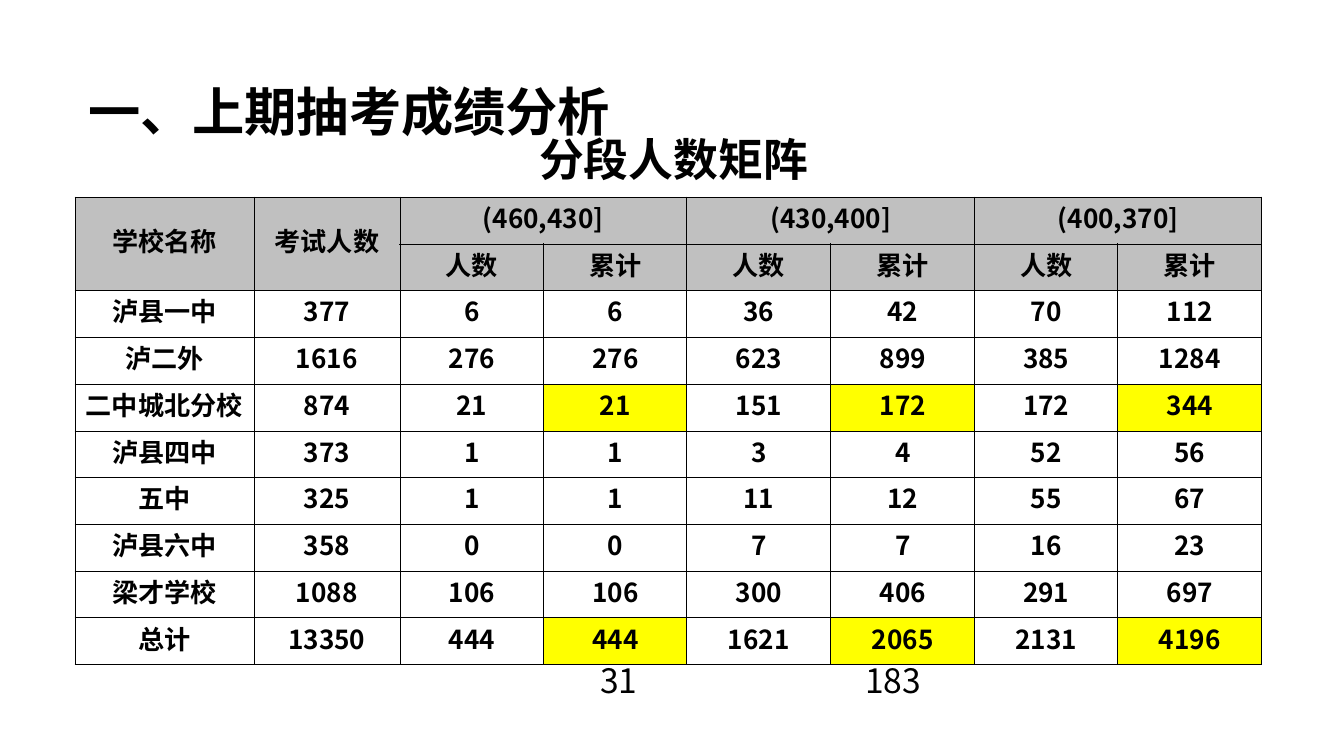
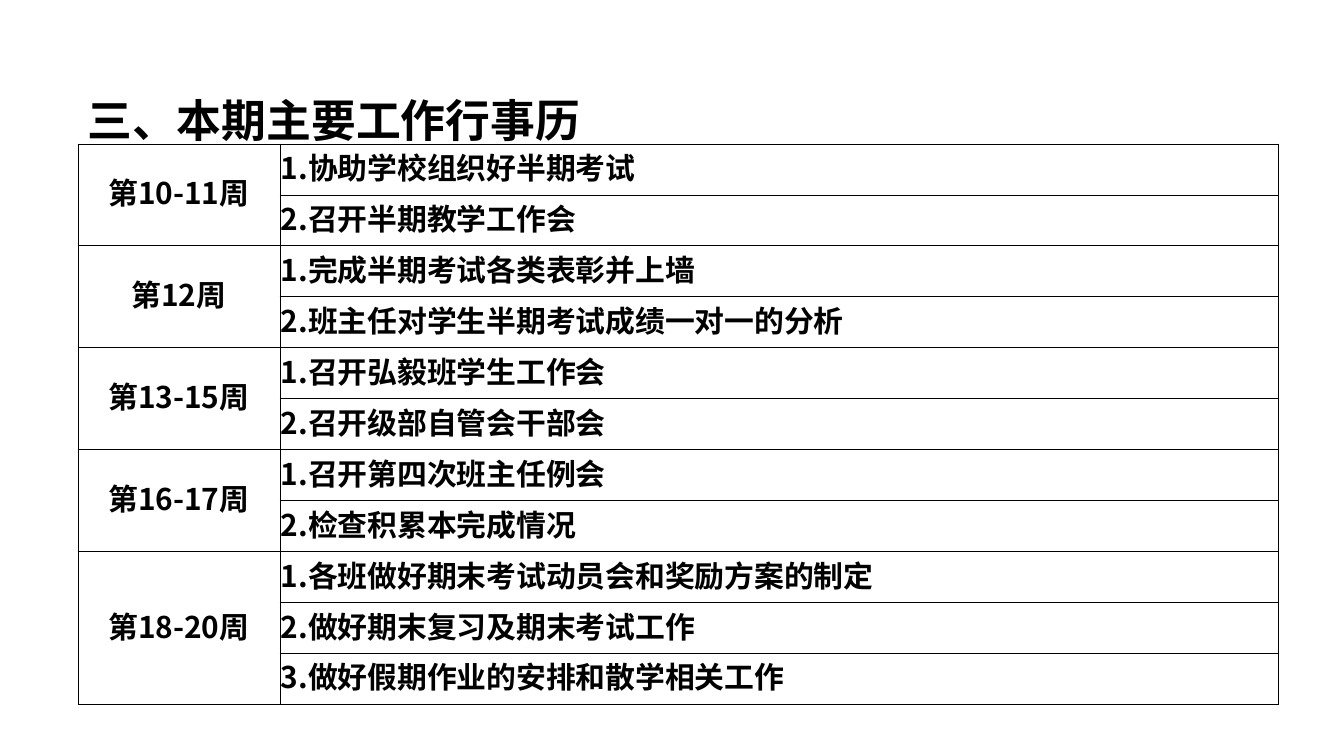
from itertools import accumulate, chain

from lxml.etree import SubElement
from pptx import Presentation
from pptx.dml.color import RGBColor
from pptx.enum.text import MSO_ANCHOR, MSO_AUTO_SIZE, PP_ALIGN
from pptx.oxml.ns import qn
from pptx.util import Emu, Pt

BLACK = RGBColor(0x00, 0x00, 0x00)
HEADER_GREY = RGBColor(0xC0, 0xC0, 0xC0)
MARK_YELLOW = RGBColor(0xFF, 0xFF, 0x00)
SANS, LATIN, NOTE_FONT = "Noto Sans CJK SC", "Arial", "Noto Sans CJK KR"
EMU_PER_PX = 914400 / 134.4
SIDES = ("lnL", "lnR", "lnT", "lnB")
BORDER = Pt(0.5)

SCORE_TITLE = "一、上期抽考成绩分析"
MATRIX_TITLE = " 分段人数矩阵"
LEAD_HEADERS = ["学校名称", "考试人数"]
BANDS = ["(460,430]", "(430,400]", "(400,370]"]
BAND_HEADERS = ["人数", "累计"]
SCHOOLS = [
    ("泸县一中", 377, (6, 36, 70)),
    ("泸二外", 1616, (276, 623, 385)),
    ("二中城北分校", 874, (21, 151, 172)),
    ("泸县四中", 373, (1, 3, 52)),
    ("五中", 325, (1, 11, 55)),
    ("泸县六中", 358, (0, 7, 16)),
    ("梁才学校", 1088, (106, 300, 291)),
    ("总计", 13350, (444, 1621, 2131)),
]
MARKED_SCHOOLS = {"二中城北分校", "总计"}
NOTES = [("183", 852, 125), ("31", 587, 78)]

CALENDAR_TITLE = "三、本期主要工作行事历"
CALENDAR = [
    ("第10-11周", ["协助学校组织好半期考试", "召开半期教学工作会"]),
    ("第12周", ["完成半期考试各类表彰并上墙", "班主任对学生半期考试成绩一对一的分析"]),
    ("第13-15周", ["召开弘毅班学生工作会", "召开级部自管会干部会"]),
    ("第16-17周", ["召开第四次班主任例会", "检查积累本完成情况"]),
    ("第18-20周", ["各班做好期末考试动员会和奖励方案的制定",
                 "做好期末复习及期末考试工作", "做好假期作业的安排和散学相关工作"]),
]


def px(length):
    return Emu(round(length * EMU_PER_PX))


def split(total, count):
    edges = [round(total * i / count) for i in range(count + 1)]
    return [end - start for start, end in zip(edges, edges[1:])]


def style_text(para, size, font=SANS, bold=True):
    for span in para.runs:
        span.font.size = Pt(size)
        span.font.bold = bold
        span.font.name = font
        span.font.color.rgb = BLACK
        east_asian = SubElement(span.font._element, qn("a:ea"))
        east_asian.set("typeface", NOTE_FONT if font == NOTE_FONT else SANS)


def add_text(page, text, left, top, width, height, size, font=SANS, bold=True):
    box = page.shapes.add_textbox(px(left), px(top), px(width), px(height))
    frame = box.text_frame
    frame.word_wrap = True
    frame.auto_size = MSO_AUTO_SIZE.SHAPE_TO_FIT_TEXT
    frame.text = text
    style_text(frame.paragraphs[0], size, font, bold)


def set_borders(cell, drawn):
    properties = cell._tc.get_or_add_tcPr()
    for side in SIDES:
        line = SubElement(properties, qn(f"a:{side}"), w=str(BORDER))
        if side in drawn:
            fill = SubElement(line, qn("a:solidFill"))
            SubElement(fill, qn("a:srgbClr"), val=str(BLACK))
        else:
            SubElement(line, qn("a:noFill"))


def add_grid(page, left, top, widths, heights):
    frame = page.shapes.add_table(len(heights), len(widths), px(left), px(top),
                                  px(sum(widths)), px(sum(heights)))
    table = frame.table
    table.first_row = table.horz_banding = False
    for column, width in zip(table.columns, widths):
        column.width = px(width)
    for row, height in zip(table.rows, heights):
        row.height = px(height)
    return table


def finish_cell(cell, drawn=SIDES, fill=None):
    set_borders(cell, drawn)
    if fill is None:
        cell.fill.background()
    else:
        cell.fill.solid()
        cell.fill.fore_color.rgb = fill


def write_cell(cell, text, size, font=SANS, align=PP_ALIGN.CENTER, anchor=MSO_ANCHOR.MIDDLE):
    cell.margin_left = cell.margin_right = cell.margin_top = px(1)
    cell.margin_bottom = px(7)
    cell.vertical_anchor = anchor
    cell.text_frame.text = text
    para = cell.text_frame.paragraphs[0]
    para.alignment = align
    style_text(para, size, font)


def build_scores(page):
    widths = [179, 146] + split(862, 2 * len(BANDS))
    heights = [73] + split(467, 2 + len(SCHOOLS))
    table = add_grid(page, 75, 124, widths, heights)

    table.cell(0, 0).merge(table.cell(0, len(widths) - 1))
    write_cell(table.cell(0, 0), MATRIX_TITLE, 24, LATIN, anchor=MSO_ANCHOR.BOTTOM)
    for column, text in enumerate(LEAD_HEADERS):
        table.cell(1, column).merge(table.cell(2, column))
        write_cell(table.cell(1, column), text, 14, LATIN)
    for index, band in enumerate(BANDS):
        first = len(LEAD_HEADERS) + 2 * index
        table.cell(1, first).merge(table.cell(1, first + 1))
        write_cell(table.cell(1, first), band, 14)
        for offset, text in enumerate(BAND_HEADERS):
            write_cell(table.cell(2, first + offset), text, 14, LATIN)

    marked = set()
    for row, (school, entrants, counts) in enumerate(SCHOOLS, 3):
        pairs = chain.from_iterable(zip(counts, accumulate(counts)))
        for column, value in enumerate([school, entrants, *pairs]):
            write_cell(table.cell(row, column), str(value), 14, SANS if column else LATIN)
            if school in MARKED_SCHOOLS and column > 2 and column % 2:
                marked.add((row, column))

    for row in range(len(heights)):
        for column in range(len(widths)):
            fill = HEADER_GREY if row in (1, 2) else None
            if (row, column) in marked:
                fill = MARK_YELLOW
            finish_cell(table.cell(row, column), SIDES if row else ("lnB",), fill)

    for text, left, width in NOTES:
        add_text(page, text, left, 653, width, 54, 18, NOTE_FONT, False)
    add_text(page, SCORE_TITLE, 75, 73, 864, 77, 28)


def build_calendar(page):
    row_count = sum(len(tasks) for _, tasks in CALENDAR)
    table = add_grid(page, 78, 144, [202, 998], [51] * row_count)
    row = 0
    for week, tasks in CALENDAR:
        table.cell(row, 0).merge(table.cell(row + len(tasks) - 1, 0))
        write_cell(table.cell(row, 0), week, 16)
        for number, task in enumerate(tasks, 1):
            write_cell(table.cell(row, 1), f"{number}.{task}", 16, align=PP_ALIGN.LEFT)
            for column in range(2):
                finish_cell(table.cell(row, column))
            row += 1
    add_text(page, CALENDAR_TITLE, 74, 86, 784, 67, 24)


def main():
    deck = Presentation()
    deck.slide_width, deck.slide_height = px(1344), px(756)
    for build in (build_scores, build_calendar):
        build(deck.slides.add_slide(deck.slide_layouts[6]))
    deck.save("out.pptx")


if __name__ == "__main__":
    main()
